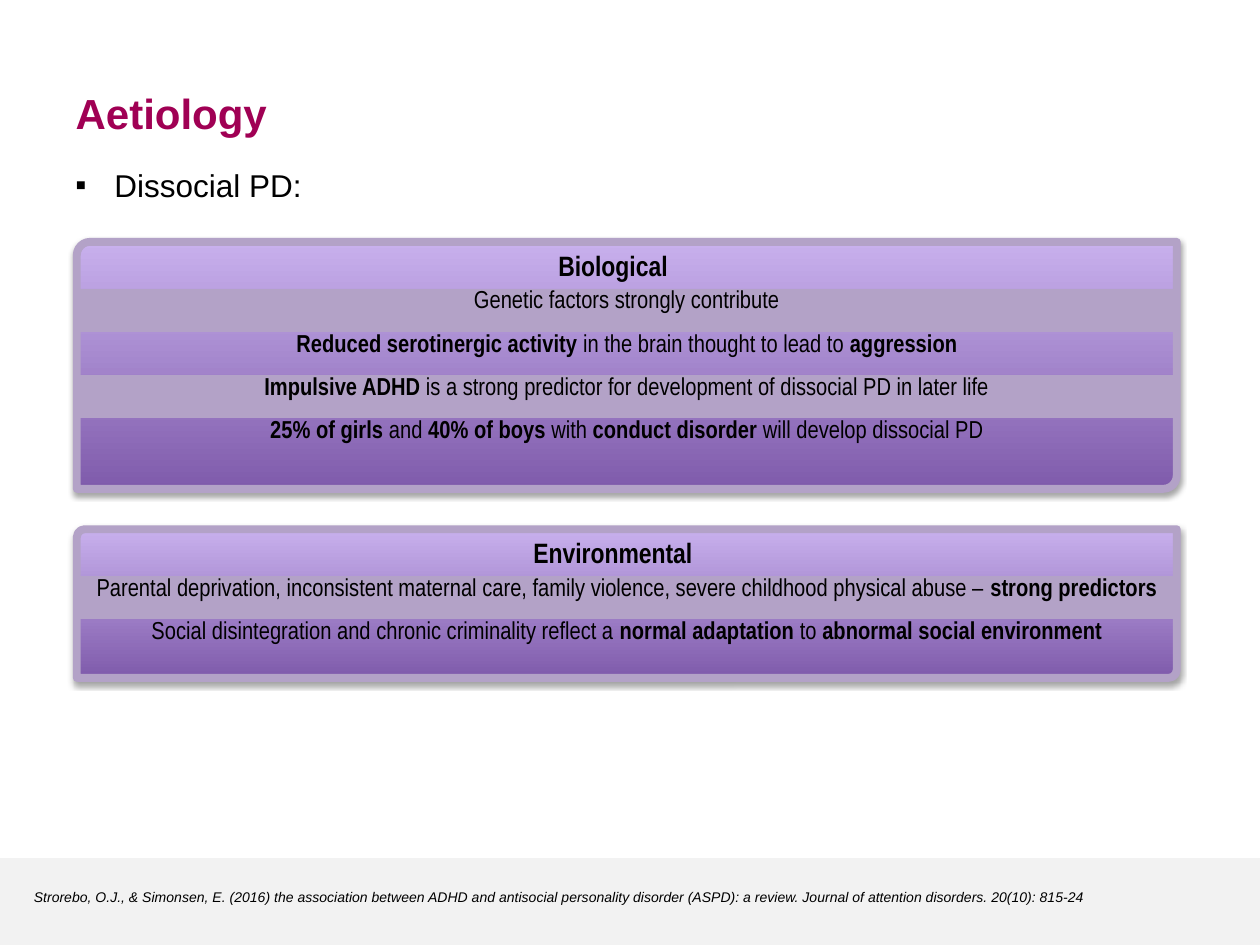
from lxml.etree import SubElement
from pptx import Presentation
from pptx.dml.color import RGBColor
from pptx.enum.shapes import MSO_SHAPE
from pptx.enum.text import MSO_ANCHOR, PP_ALIGN
from pptx.oxml.ns import qn
from pptx.util import Inches, Pt

# Content: ** marks the start and end of bold text
TITLE = "Aetiology"
BULLET = "Dissocial PD:"
CITATION = ("Strorebo, O.J., & Simonsen, E. (2016) the association between ADHD and antisocial "
            "personality disorder (ASPD): a review. Journal of attention disorders. 20(10): 815-24")
PANELS = [
    {"heading": "Biological", "top": 1.92, "height": 1.96, "rows": [
        "Genetic factors strongly contribute",
        "**Reduced serotinergic activity **in the brain thought to lead to **aggression**",
        "**Impulsive ADHD **is a strong predictor for development of dissocial PD in later life",
        "**25% of girls **and **40% of boys **with **conduct disorder **will develop dissocial PD",
    ]},
    {"heading": "Environmental", "top": 4.2, "height": 1.18, "rows": [
        "Parental deprivation, inconsistent maternal care, family violence, "
        "severe childhood physical abuse – **strong predictors**",
        "Social disintegration and chronic criminality reflect a **normal adaptation **to "
        "**abnormal social environment**",
    ]},
]
COLORS = {"title": "A00054", "text": "000000", "footer": "F2F2F2",
          "band": "B3A2C7", "dark": "7F5BAB", "light": "C8B0ED"}
SLIDE_WIDTH, SLIDE_HEIGHT = 10, 7.5
PANEL_LEFT, PANEL_WIDTH, HEADING_WIDTH = 0.61, 8.73, 8.51
HEADING_HEIGHT, ROW_HEIGHT = 0.37, 0.343
FOOTER_TOP = 6.81
NO_STYLE_TABLE = "{2D5ABB26-0587-4C30-8999-92F81FD0307C}"


def color(name):
    return RGBColor.from_string(COLORS[name])


def box(*lengths):
    return [Inches(length) for length in lengths]


def format_font(font, size, name="Arial", shade="text", bold=False, italic=False):
    font.size, font.name = Pt(size), name
    font.bold, font.italic = bold, italic
    font.color.rgb = color(shade)


def add_text(shapes, place, text, size, **style):
    text_frame = shapes.add_textbox(*box(*place)).text_frame
    text_frame.word_wrap = True
    text_frame.text = text
    paragraph = text_frame.paragraphs[0]
    format_font(paragraph.runs[0].font, size, **style)
    return paragraph


def add_shadow(shape):
    shape.shadow.inherit = False
    effects = shape.element.spPr.find(qn("a:effectLst"))
    shadow = SubElement(effects, qn("a:outerShdw"), blurRad=str(Pt(3.1)), dist=str(Pt(1.8)),
                        dir="5400000", rotWithShape="0")
    black = SubElement(shadow, qn("a:srgbClr"), val=COLORS["text"])
    SubElement(black, qn("a:alpha"), val="35000")


def add_panel(slide, heading, top, height, rows):
    # Gradient frame and its heading
    group = slide.shapes.add_group_shape()
    frame = group.shapes.add_shape(MSO_SHAPE.ROUND_2_DIAG_RECTANGLE,
                                   *box(PANEL_LEFT, top, PANEL_WIDTH, height))
    frame.adjustments[0], frame.adjustments[1] = 0.054, 0
    frame.fill.gradient()
    frame.fill.gradient_angle = 90
    for stop, shade in zip(frame.fill.gradient_stops, ("dark", "light")):
        stop.color.rgb = color(shade)
    frame.line.color.rgb = color("band")
    frame.line.width = Pt(4.5)
    add_shadow(frame)
    paragraph = add_text(group.shapes, (PANEL_LEFT, top, HEADING_WIDTH, HEADING_HEIGHT),
                         heading, 16, name="Arial Narrow", bold=True)
    paragraph.alignment = PP_ALIGN.CENTER

    # Rows alternate between a plain band and the gradient behind
    graphic = slide.shapes.add_table(len(rows), 1, *box(
        PANEL_LEFT, top + HEADING_HEIGHT, PANEL_WIDTH, ROW_HEIGHT * len(rows)))
    table = graphic.table
    table.first_row = table.horz_banding = False
    next(graphic.element.iter(qn("a:tableStyleId"))).text = NO_STYLE_TABLE
    for index, text in enumerate(rows):
        cell = table.cell(index, 0)
        cell.margin_top = cell.margin_bottom = Inches(0.02)
        if index % 2:
            cell.fill.background()
        else:
            cell.fill.solid()
            cell.fill.fore_color.rgb = color("band")
        paragraph = cell.text_frame.paragraphs[0]
        paragraph.alignment = PP_ALIGN.CENTER
        for part, words in enumerate(text.split("**")):
            if words:
                run = paragraph.add_run()
                run.text = words
                format_font(run.font, 14, name="Arial Narrow", bold=part % 2 == 1)


def main():
    presentation = Presentation()
    presentation.slide_width, presentation.slide_height = box(SLIDE_WIDTH, SLIDE_HEIGHT)
    slide = presentation.slides.add_slide(presentation.slide_layouts[5])

    # Footer band
    footer = slide.shapes.add_shape(MSO_SHAPE.RECTANGLE, *box(
        0, FOOTER_TOP, SLIDE_WIDTH, SLIDE_HEIGHT - FOOTER_TOP))
    footer.shadow.inherit = False
    footer.fill.solid()
    footer.fill.fore_color.rgb = color("footer")
    footer.line.fill.background()

    # Title
    title = slide.shapes.title
    title.left, title.top, title.width, title.height = box(0.5, 0.62, 8.5, 0.55)
    title.text_frame.text = TITLE
    title.text_frame.vertical_anchor = MSO_ANCHOR.MIDDLE
    paragraph = title.text_frame.paragraphs[0]
    paragraph.alignment = PP_ALIGN.LEFT
    format_font(paragraph.runs[0].font, 24, shade="title", bold=True)

    # Bullet line
    paragraph = add_text(slide.shapes, (0.5, 1.27, 9.2, 0.4), BULLET, 18)
    properties = paragraph._p.get_or_add_pPr()
    properties.set("marL", str(Inches(0.31)))
    properties.set("indent", str(Inches(-0.31)))
    SubElement(properties, qn("a:buFont"), typeface="Arial")
    SubElement(properties, qn("a:buChar"), char="▪")

    for panel in PANELS:
        add_panel(slide, **panel)

    # Citation
    add_text(slide.shapes, (0.17, 7, 8.65, 0.24), CITATION, 8, italic=True)
    presentation.save("out.pptx")


if __name__ == "__main__":
    main()
